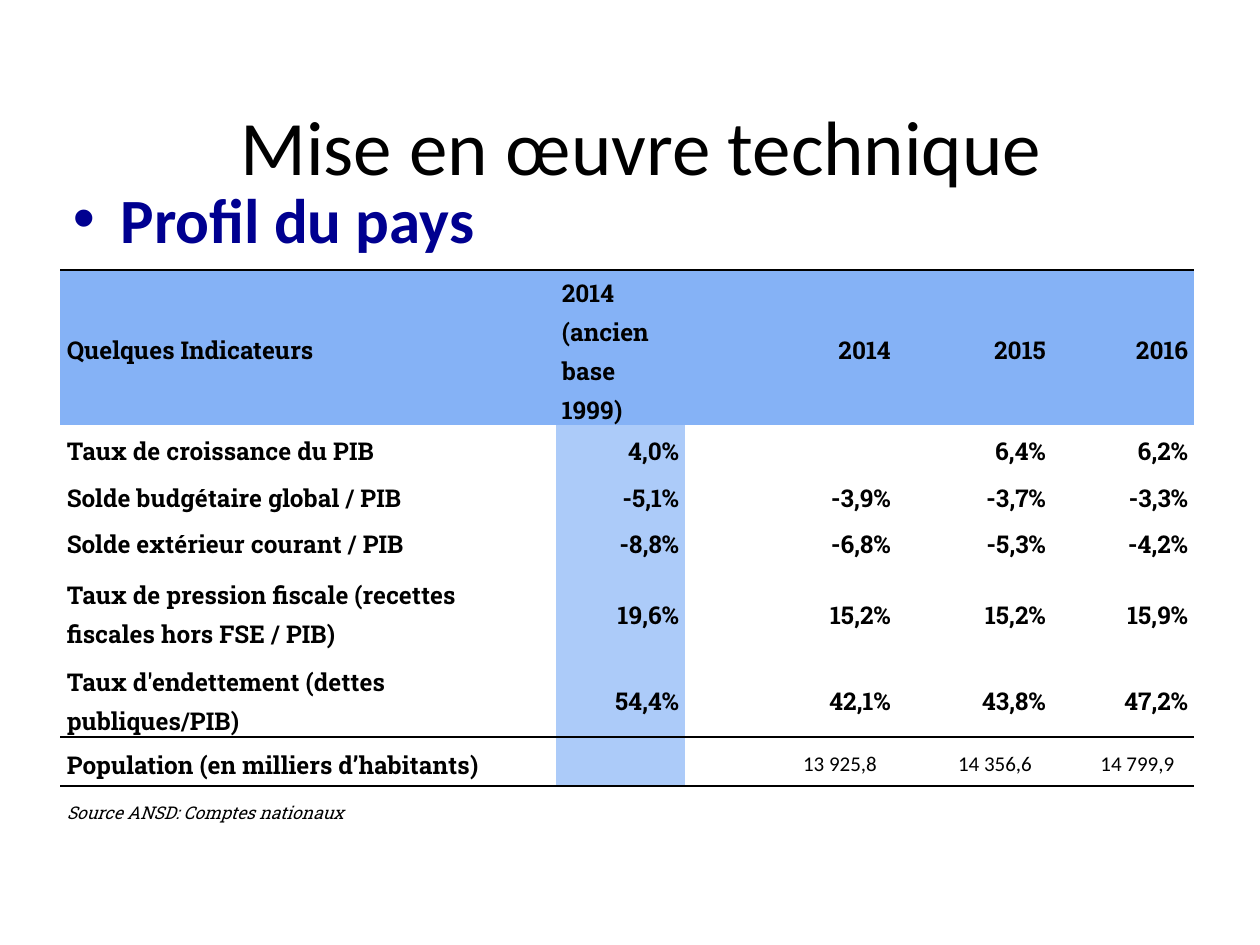
from dataclasses import dataclass

from lxml import etree
from pptx import Presentation
from pptx.dml.color import RGBColor as RGB
from pptx.enum.text import MSO_ANCHOR as Anchor, MSO_AUTO_SIZE as AutoSize, PP_ALIGN as Align
from pptx.oxml.ns import qn
from pptx.util import Inches, Pt


@dataclass(frozen=True)
class Theme:
    text: str = "000000"
    accent: str = "000090"
    header: str = "85B2F6"
    old_base: str = "ACCBF9"
    paper: str = "FFFFFF"
    sans: str = "Calibri"
    slab: str = "Roboto Slab"
    title_size: int = 44
    subtitle_size: int = 36
    table_size: int = 14
    population_size: int = 12
    source_size: int = 10
    rule_width: float = 1.5


THEME = Theme()
NO_STYLE = "{2D5ABB26-0587-4C30-8999-92F81FD0307C}"

COLUMN_WIDTHS = (3.93, 1.03, 1.68, 1.23, 1.13)
ROW_HEIGHTS = (1.23, 0.37, 0.37, 0.37, 0.75, 0.62, 0.39, 0.39)
ROWS = (
    ("Quelques Indicateurs", "2014 (ancien base 1999)", "2014", "2015", "2016"),
    ("Taux de croissance du PIB", "4,0%", "", "6,4%", "6,2%"),
    ("Solde budgétaire global / PIB", "-5,1%", "-3,9%", "-3,7%", "-3,3%"),
    ("Solde extérieur courant / PIB", "-8,8%", "-6,8%", "-5,3%", "-4,2%"),
    ("Taux de pression fiscale (recettes fiscales hors FSE / PIB)",
     "19,6%", "15,2%", "15,2%", "15,9%"),
    ("Taux d'endettement (dettes publiques/PIB)", "54,4%", "42,1%", "43,8%", "47,2%"),
    ("Population (en milliers d’habitants)", "", "13 925,8", "14 356,6", "14 799,9"),
    ("Source ANSD: Comptes nationaux", "", "", "", ""),
)
HEADER_ROW, DEBT_ROW, POPULATION_ROW, SOURCE_ROW = 0, 5, 6, 7
TOP_RULES = (HEADER_ROW, POPULATION_ROW, SOURCE_ROW)
BOTTOM_RULES = (DEBT_ROW, POPULATION_ROW)


def write(para, text, *, size, font=THEME.sans, color=THEME.text, bold=False,
          italic=False, align=Align.LEFT, spacing=None):
    para.alignment = align
    if spacing:
        para.line_spacing = spacing
    span = para.add_run()
    span.text = text
    span.font.name = font
    span.font.size = Pt(size)
    span.font.bold = bold
    span.font.italic = italic
    span.font.color.rgb = RGB.from_string(color)


def place(shape, box):
    shape.left, shape.top, shape.width, shape.height = map(Inches, box)


def add_title(page, box):
    title = page.shapes.title
    place(title, box)
    frame = title.text_frame
    frame.auto_size = AutoSize.NONE
    frame.vertical_anchor = Anchor.MIDDLE
    write(frame.paragraphs[0], "Mise en œuvre technique ",
          size=THEME.title_size, align=Align.CENTER)


def add_subtitle(page, box):
    frame = page.shapes.add_textbox(*map(Inches, box)).text_frame
    frame.word_wrap = True
    para = frame.paragraphs[0]
    properties = para._p.get_or_add_pPr()
    properties.set("marL", str(Inches(0.38)))
    properties.set("indent", str(-Inches(0.38)))
    etree.SubElement(properties, qn("a:buFont"), typeface="Arial")
    etree.SubElement(properties, qn("a:buChar"), char="•")
    write(para, "Profil du pays", size=THEME.subtitle_size,
          color=THEME.accent, bold=True)


def add_rule(cell, side):
    """Draw one cell border; side is lnT or lnB."""
    line = etree.Element(qn(f"a:{side}"), w=str(Pt(THEME.rule_width)))
    fill = etree.SubElement(line, qn("a:solidFill"))
    etree.SubElement(fill, qn("a:srgbClr"), val=THEME.text)
    cell._tc.get_or_add_tcPr().insert(0, line)


def cell_fill(row, column):
    if row == HEADER_ROW:
        return THEME.header
    if column == 1 and row != SOURCE_ROW:
        return THEME.old_base
    return THEME.paper


def cell_format(row, column):
    left = column == 0 or (row == HEADER_ROW and column == 1)
    style = dict(size=THEME.table_size, font=THEME.slab, bold=True, spacing=1.2,
                 align=Align.LEFT if left else Align.RIGHT)
    if row == POPULATION_ROW and column > 0:
        style.update(size=THEME.population_size, font=THEME.sans, bold=False)
    elif row == SOURCE_ROW:
        style.update(size=THEME.source_size, bold=False, italic=True)
    return style


def fill_cell(cell, text, row, column):
    cell.margin_left = cell.margin_right = Inches(0.05)
    cell.margin_top = cell.margin_bottom = 0
    if row == POPULATION_ROW and column > 0:
        cell.margin_right = Inches(0.16)
    cell.vertical_anchor = Anchor.MIDDLE
    cell.fill.solid()
    cell.fill.fore_color.rgb = RGB.from_string(cell_fill(row, column))
    if row in BOTTOM_RULES:
        add_rule(cell, "lnB")
    if row in TOP_RULES:
        add_rule(cell, "lnT")
    if text:
        write(cell.text_frame.paragraphs[0], text, **cell_format(row, column))


def add_indicators(page, box):
    frame = page.shapes.add_table(len(ROWS), len(COLUMN_WIDTHS), *map(Inches, box))
    table = frame.table
    table.first_row = table.horz_banding = False
    table._tbl.tblPr.find(qn("a:tableStyleId")).text = NO_STYLE
    for column, width in zip(table.columns, COLUMN_WIDTHS):
        column.width = Inches(width)
    for row, height in zip(table.rows, ROW_HEIGHTS):
        row.height = Inches(height)
    for row, texts in enumerate(ROWS):
        for column, text in enumerate(texts):
            fill_cell(table.cell(row, column), text, row, column)


def main():
    deck = Presentation()
    deck.slide_width, deck.slide_height = Inches(10), Inches(7.5)
    page = deck.slides.add_slide(deck.slide_layouts.get_by_name("Title Only"))
    add_title(page, (0.66, 0.77, 9, 0.76))
    add_subtitle(page, (0.48, 1.38, 9, 5.33))
    add_indicators(page, (0.48, 2.14, 9, sum(ROW_HEIGHTS)))
    deck.save("out.pptx")


if __name__ == "__main__":
    main()
